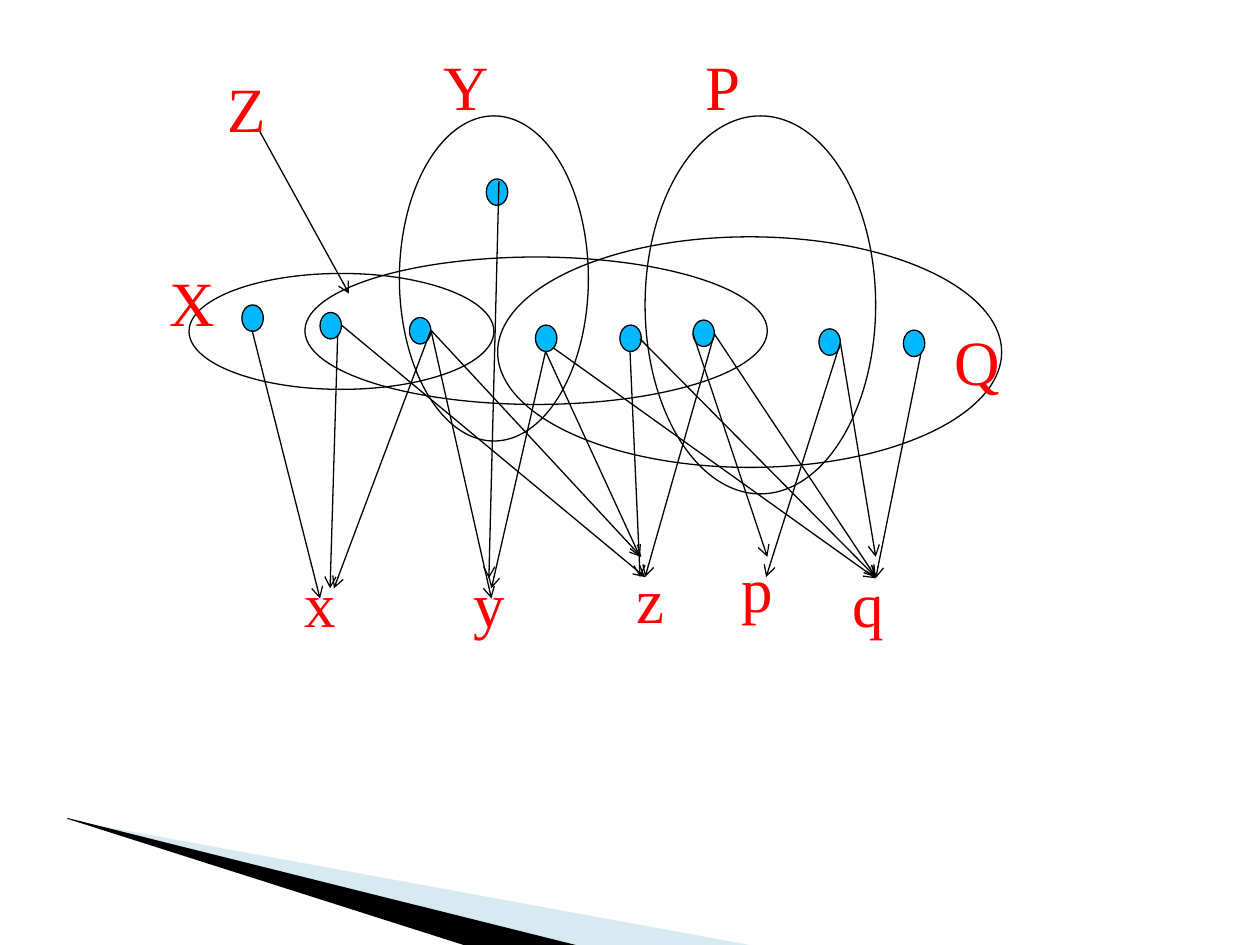
"""Build a slide of overlapping sets whose elements map to target letters."""
from lxml.etree import SubElement
from pptx import Presentation
from pptx.dml.color import RGBColor
from pptx.enum.shapes import MSO_CONNECTOR, MSO_SHAPE
from pptx.enum.text import MSO_AUTO_SIZE
from pptx.oxml.ns import qn
from pptx.util import Inches, Pt

BLACK = RGBColor(0x00, 0x00, 0x00)
RED = RGBColor(0xFF, 0x00, 0x00)
DOT_BLUE = RGBColor(0x00, 0xB8, 0xFF)
PALE_BLUE = RGBColor(0x9F, 0xCB, 0xDC)

WEDGES = [
    ([(0.55, 6.51), (5.95, 7.5), (4.56, 7.5), (0.55, 6.5)], PALE_BLUE, 40),
    ([(0.53, 6.49), (4.57, 7.5), (3.68, 7.5), (0.54, 6.5)], BLACK, 100),
]
DOT_SIZE = (0.17, 0.21)
DOTS = [(1.92, 2.42), (2.54, 2.48), (3.25, 2.52), (4.25, 2.58), (4.92, 2.58),
        (5.5, 2.54), (6.5, 2.61), (7.17, 2.62), (3.86, 1.42)]
SETS = {
    "X": (1.5, 2.17, 2.42, 0.92),
    "Z": (2.42, 2.04, 3.67, 1.17),
    "Y": (3.17, 0.92, 1.5, 2.58),
    "Q": (3.95, 1.88, 4, 1.83),
    "P": (5.12, 0.92, 1.83, 3),
}
MAPPINGS = {
    "x": [((2, 2.62), (2.54, 4.75)), ((2.68, 2.66), (2.62, 4.67)),
          ((3.42, 2.62), (2.65, 4.67))],
    "y": [((3.42, 2.62), (3.9, 4.75)), ((4.33, 2.79), (3.9, 4.67)),
          ((3.96, 1.44), (3.88, 4.59))],
    "z": [((2.71, 2.58), (5.12, 4.58)), ((3.42, 2.62), (5.09, 4.42)),
          ((4.33, 2.79), (5.08, 4.42)), ((5, 2.79), (5.08, 4.58)),
          ((5.67, 2.65), (5.12, 4.58))],
    "p": [((5.5, 2.65), (6.09, 4.42)), ((6.67, 2.72), (6.08, 4.58))],
    "q": [((4.39, 2.76), (6.95, 4.59)), ((5.08, 2.69), (6.95, 4.58)),
          ((5.67, 2.65), (6.95, 4.58)), ((6.67, 2.72), (6.95, 4.42)),
          ((7.31, 2.8), (6.95, 4.59))],
    "Z": [((2.06, 1.04), (2.77, 2.33))],
}
LABEL_HEIGHT = 0.7
LABELS = [
    ("X", 1.25, 2.04, 0.67), ("Y", 3.42, 0.33, 0.61), ("Z", 1.71, 0.5, 0.92),
    ("P", 5.5, 0.33, 1.81), ("Q", 7.48, 2.51, 1.81), ("q", 6.67, 4.43, 1.81),
    ("p", 5.79, 4.31, 1.81), ("z", 4.95, 4.4, 1.81), ("y", 3.66, 4.43, 0.98),
    ("x", 2.32, 4.43, 1.33),
]


def add_wedge(slide, corners, color, opacity):
    start, *others = [(Inches(x), Inches(y)) for x, y in corners]
    builder = slide.shapes.build_freeform(*start)
    builder.add_line_segments(others, close=True)
    wedge = builder.convert_to_shape()
    wedge.shadow.inherit = False
    wedge.fill.solid()
    wedge.fill.fore_color.rgb = color
    wedge.line.fill.background()
    if opacity < 100:
        rgb = wedge.fill._xPr.find(f"{qn('a:solidFill')}/{qn('a:srgbClr')}")
        SubElement(rgb, qn("a:alpha"), val=str(opacity * 1000))


def add_ellipse(slide, bounds, color=None):
    ellipse = slide.shapes.add_shape(MSO_SHAPE.OVAL, *map(Inches, bounds))
    ellipse.shadow.inherit = False
    if color is None:
        ellipse.fill.background()
    else:
        ellipse.fill.solid()
        ellipse.fill.fore_color.rgb = color
    ellipse.line.color.rgb = BLACK
    ellipse.line.width = Pt(0.75)


def add_arrow(slide, start, end):
    arrow = slide.shapes.add_connector(
        MSO_CONNECTOR.STRAIGHT, *map(Inches, start + end))
    arrow.line.color.rgb = BLACK
    arrow.line.width = Pt(0.75)
    SubElement(arrow.line._get_or_add_ln(), qn("a:tailEnd"), type="arrow")
    SubElement(arrow._element.spPr, qn("a:effectLst"))


def add_label(slide, letter, left, top, width):
    label = slide.shapes.add_textbox(
        *map(Inches, (left, top, width, LABEL_HEIGHT)))
    frame = label.text_frame
    frame.text = letter
    frame.word_wrap = True
    frame.auto_size = MSO_AUTO_SIZE.SHAPE_TO_FIT_TEXT
    font = frame.paragraphs[0].runs[0].font
    font.name = "Times New Roman"
    font.size = Pt(36)
    font.color.rgb = RED


def main():
    deck = Presentation()
    deck.slide_width, deck.slide_height = Inches(10), Inches(7.5)
    slide = deck.slides.add_slide(deck.slide_layouts[6])
    for wedge in WEDGES:
        add_wedge(slide, *wedge)
    for dot in DOTS:
        add_ellipse(slide, dot + DOT_SIZE, DOT_BLUE)
    for bounds in SETS.values():
        add_ellipse(slide, bounds)
    for arrows in MAPPINGS.values():
        for start, end in arrows:
            add_arrow(slide, start, end)
    for label in LABELS:
        add_label(slide, *label)
    deck.save("out.pptx")


if __name__ == "__main__":
    main()
